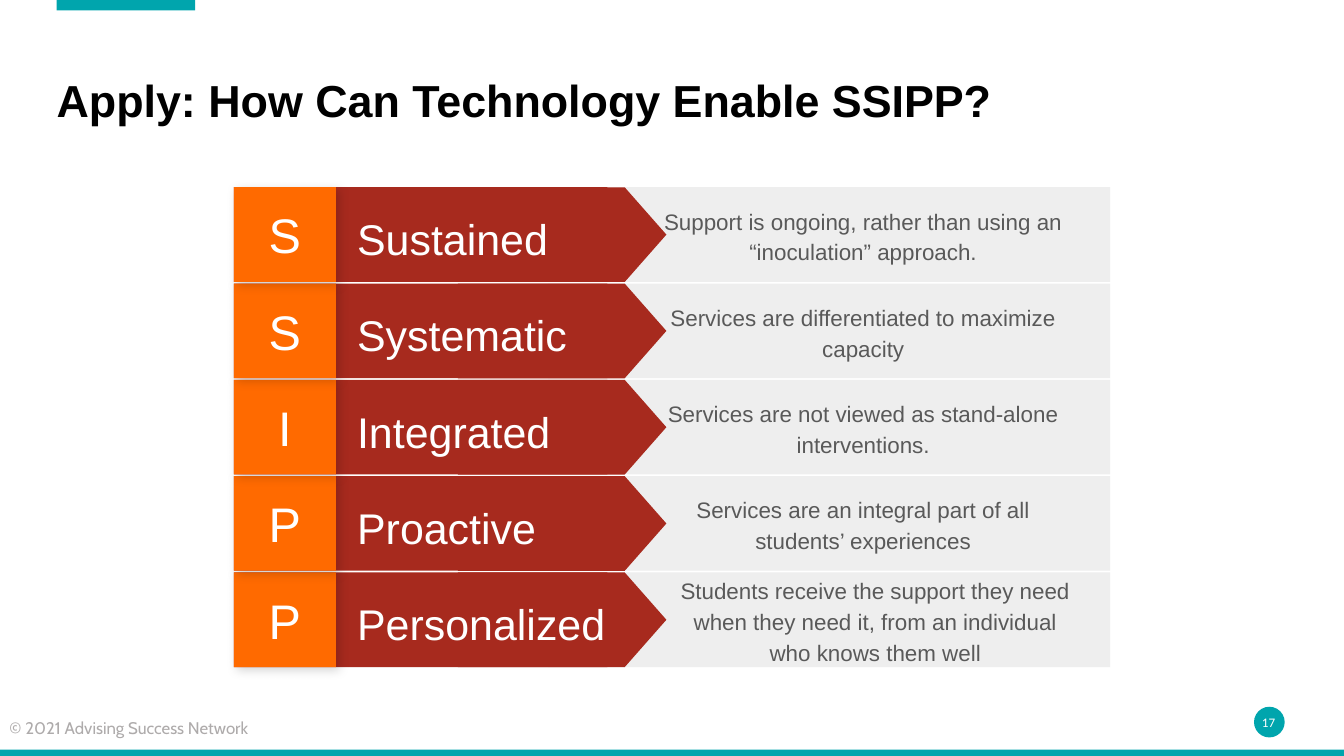
"""Build the SSIPP slide: five lettered rows with arrows and descriptions."""
from lxml import etree
from pptx import Presentation
from pptx.dml.color import RGBColor
from pptx.enum.shapes import MSO_SHAPE
from pptx.enum.text import MSO_ANCHOR, MSO_AUTO_SIZE, PP_ALIGN
from pptx.oxml import parse_xml
from pptx.oxml.ns import nsdecls
from pptx.util import Cm, Pt

RECT, OVAL = MSO_SHAPE.RECTANGLE, MSO_SHAPE.OVAL
ARROW = MSO_SHAPE.FLOWCHART_OFFPAGE_CONNECTOR
LEFT, CENTER = PP_ALIGN.LEFT, PP_ALIGN.CENTER
MIDDLE, BOTTOM = MSO_ANCHOR.MIDDLE, MSO_ANCHOR.BOTTOM
FIXED = MSO_AUTO_SIZE.NONE

TEAL = RGBColor(0x00, 0xA5, 0xAD)
RED = RGBColor(0xA7, 0x2A, 0x1E)
BRICK = RGBColor(0xB0, 0x2C, 0x20)
ORANGE = RGBColor(0xFF, 0x6A, 0x00)
PALE = RGBColor(0xEE, 0xEE, 0xEE)
GRAY = RGBColor(0x59, 0x59, 0x59)
SILVER = RGBColor(0xAE, 0xAB, 0xAB)
WHITE = RGBColor(0xFF, 0xFF, 0xFF)
BLACK = RGBColor(0x00, 0x00, 0x00)

SHADOW = (
    f'<a:effectLst {nsdecls("a")}><a:outerShdw blurRad="{Pt(5.6)}" dist="{Pt(2.2)}" '
    'dir="2700000" algn="tl" rotWithShape="0"><a:srgbClr val="000000">'
    '<a:alpha val="17000"/></a:srgbClr></a:outerShdw></a:effectLst>'
)

TITLE = {"name": "Arial", "size": Pt(24), "bold": True}
LETTER = {"name": "Arial", "size": Pt(26)}
LABEL = {"name": "Arial", "size": Pt(23)}
DETAIL = {"name": "Arial", "size": Pt(12)}
FOOTER = {"name": "Cabin", "size": Pt(9)}
NUMBER = {"name": "Calibri", "size": Pt(7)}

ROWS = [
    ("S", "Sustained", "Support is ongoing, rather than using an “inoculation” approach.", 12.19),
    ("S", "Systematic", "Services are differentiated to maximize capacity", 12.19),
    ("I", "Integrated", "Services are not viewed as stand-alone interventions.", 12.19),
    ("P", "Proactive", "Services are an integral part of all students’ experiences", 12.19),
    ("P", "Personalized", "Students receive the support they need when they need it, "
     "from an individual who knows them well", 12.42),
]
TOP, STEP, HIGH, LONG = 3.54, 1.82, 1.79, 3.94


def draw(shapes, kind, area, fill):
    shape = shapes.add_shape(kind, *map(Cm, area))
    shape.shadow.inherit = False
    shape.fill.solid()
    shape.fill.fore_color.rgb = fill
    shape.line.fill.background()
    return shape


def write(shape, text, style, color, align=LEFT, pad=0.25, space=1.0, anchor=MIDDLE):
    frame = shape.text_frame
    format = {
        "word_wrap": True, "auto_size": FIXED, "vertical_anchor": anchor,
        "margin_left": Cm(pad), "margin_right": Cm(pad),
        "margin_top": Cm(pad), "margin_bottom": Cm(pad),
    }
    for key, value in format.items():
        setattr(frame, key, value)
    frame.text = text
    para = frame.paragraphs[0]
    para.alignment = align
    para.line_spacing = space
    font = para.runs[0].font
    for key, value in style.items():
        setattr(font, key, value)
    font.color.rgb = color


deck = Presentation()
deck.slide_width, deck.slide_height = Cm(25.4), Cm(14.29)
slide = deck.slides.add_slide(deck.slide_layouts[5])
shapes = slide.shapes

title = shapes.title
title.left, title.top, title.width, title.height = map(Cm, (1.07, 0.51, 23.24, 1.9))
write(title, "Apply: How Can Technology Enable SSIPP?", TITLE, BLACK,
      pad=0, space=0.9, anchor=BOTTOM)

draw(shapes, RECT, (1.07, -0.03, 2.62, 0.23), TEAL)
draw(shapes, OVAL, (23.7, 13.36, 0.58, 0.58), TEAL)
draw(shapes, RECT, (0, 14.17, 25.4, 0.15), TEAL)

footer = shapes.add_textbox(*map(Cm, (0, 13.4, 5.92, 0.7)))
write(footer, "© 2021 Advising Success Network", FOOTER, SILVER, pad=0.18)
number = shapes.add_textbox(*map(Cm, (23.67, 13.46, 0.61, 0.38)))
write(number, "17", NUMBER, WHITE, CENTER, pad=0)

for index, (letter, word, text, left) in reversed(list(enumerate(ROWS))):
    top = TOP + index * STEP
    row = shapes.add_group_shape().shapes
    draw(row, RECT, (10.36, top, 10.62, HIGH), PALE)
    draw(row, RECT, (6.35, top, 5.13, HIGH), RED)
    arrow = draw(row, ARROW, (9.73, top + (HIGH - LONG) / 2, HIGH, LONG), RED)
    arrow.rotation = 270
    label = row.add_textbox(*map(Cm, (6.5, top + 0.21, 5.38, 1.37)))
    write(label, word, LABEL, WHITE, space=1.15)

    area = (4.42, top, 1.93, HIGH)
    base = draw(row, RECT, area, BRICK)
    props = base.element.spPr
    props.remove(props.find("{*}effectLst"))
    props.append(parse_xml(SHADOW))
    tile = draw(row, RECT, area, ORANGE)
    write(tile, letter, LETTER, WHITE, CENTER)

    detail = row.add_textbox(*map(Cm, (left, top, 8.25, HIGH)))
    write(detail, text, DETAIL, GRAY, CENTER, space=1.15)

etree.cleanup_namespaces(slide.element)
deck.save("out.pptx")
